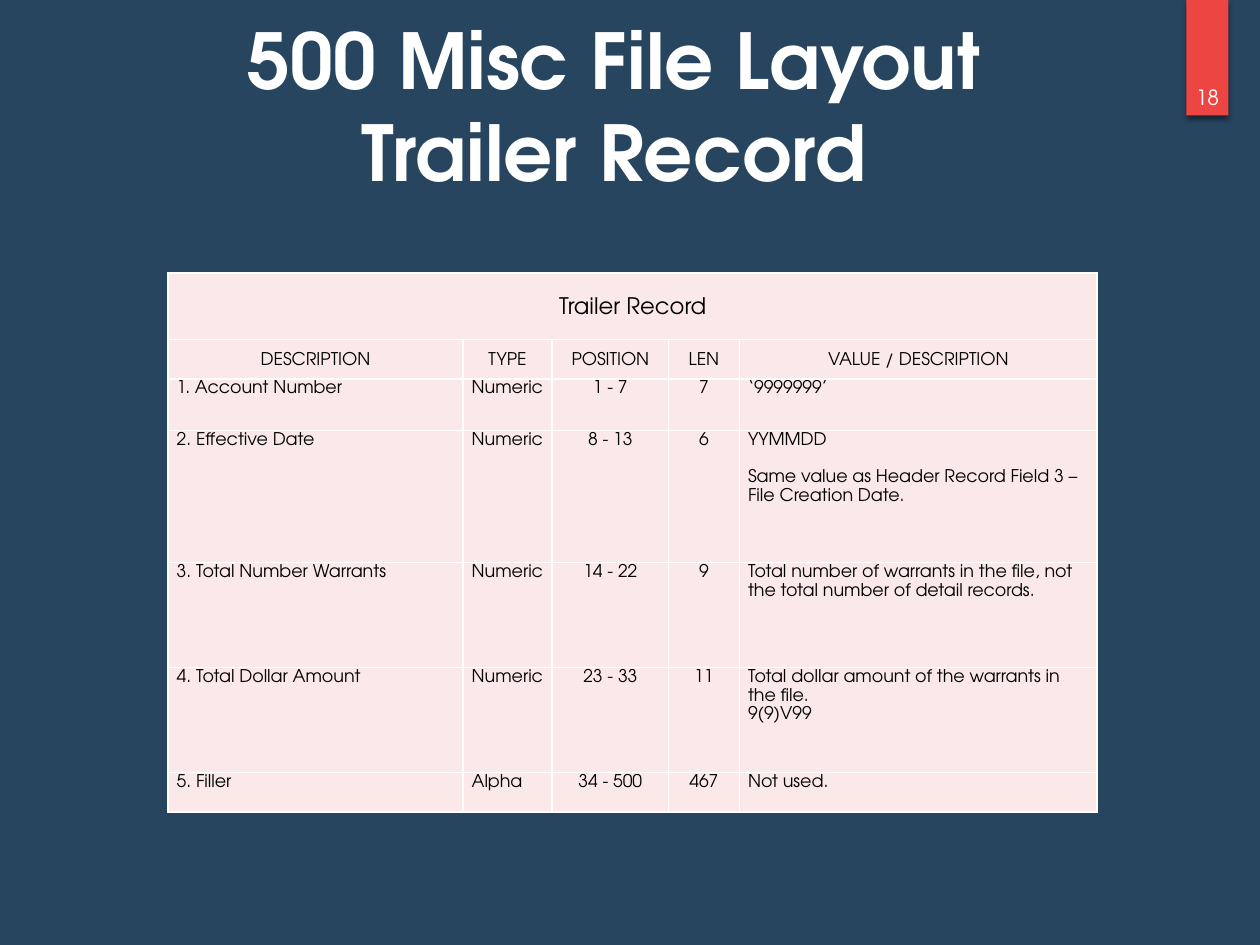
import dataclasses

import lxml.etree
import pptx
import pptx.dml.color
import pptx.enum.shapes
import pptx.enum.text
import pptx.oxml
import pptx.oxml.ns
import pptx.util

Pt = pptx.util.Pt
Align = pptx.enum.text.PP_ALIGN
Anchor = pptx.enum.text.MSO_ANCHOR
qn = pptx.oxml.ns.qn


@dataclasses.dataclass(frozen=True)
class Theme:
    font: str = "TeX Gyre Adventor"
    background: str = "27455F"
    accent: str = "ED4541"
    cell: str = "FBE9E9"
    light: str = "FFFFFF"
    dark: str = "000000"
    title: float = 44
    caption: float = 13
    number: float = 12
    body: float = 10
    spacing: float = 1.15


def rgb(code):
    return pptx.dml.color.RGBColor.from_string(code)


class SlideBuilder:
    def __init__(self, slide, theme):
        self.slide = slide
        self.theme = theme
        slide.background.fill.solid()
        slide.background.fill.fore_color.rgb = rgb(theme.background)

    def set_text(self, frame, paragraphs, size, color, align, bold=False, spacing=None, gap=0):
        frame.word_wrap = True
        for index, words in enumerate(paragraphs):
            paragraph = frame.paragraphs[0] if index == 0 else frame.add_paragraph()
            paragraph.text = words
            paragraph.alignment = align
            paragraph.line_spacing = spacing
            paragraph.space_before = Pt(gap if index else 0)
            paragraph.font.name = self.theme.font
            paragraph.font.size = Pt(size)
            paragraph.font.bold = bold
            paragraph.font.color.rgb = rgb(color)

    def title(self, words, left, top, width, height):
        heading = self.slide.shapes.title
        heading.left, heading.top = Pt(left), Pt(top)
        heading.width, heading.height = Pt(width), Pt(height)
        frame = heading.text_frame
        frame.auto_size = pptx.enum.text.MSO_AUTO_SIZE.NONE
        frame.vertical_anchor = Anchor.MIDDLE
        self.set_text(frame, [words], self.theme.title, self.theme.light, Align.CENTER, bold=True)

    def ribbon(self, left, top, width, height):
        ribbon = self.slide.shapes.add_shape(
            pptx.enum.shapes.MSO_SHAPE.RECTANGLE, Pt(left), Pt(top), Pt(width), Pt(height))
        ribbon.fill.solid()
        ribbon.fill.fore_color.rgb = rgb(self.theme.accent)
        ribbon.line.fill.background()
        ribbon.shadow.inherit = False
        effects = ribbon._element.spPr.find(qn("a:effectLst"))
        shadow = lxml.etree.SubElement(
            effects, qn("a:outerShdw"), blurRad=str(Pt(3)), dist=str(Pt(2)), dir="5400000")
        tint = lxml.etree.SubElement(shadow, qn("a:srgbClr"), val=self.theme.dark)
        lxml.etree.SubElement(tint, qn("a:alpha"), val="45000")

    def page_number(self, words, left, top, width, height):
        frame = self.slide.shapes.add_textbox(
            Pt(left), Pt(top), Pt(width), Pt(height)).text_frame
        frame.margin_left = frame.margin_right = 0
        frame.vertical_anchor = Anchor.BOTTOM
        self.set_text(frame, [words], self.theme.number, self.theme.light, Align.CENTER)

    def border(self, cell):
        properties = cell._tc.get_or_add_tcPr()
        for index, side in enumerate(("a:lnL", "a:lnR", "a:lnT", "a:lnB")):
            line = properties.makeelement(qn(side), {"w": str(Pt(1))})
            fill = lxml.etree.SubElement(line, qn("a:solidFill"))
            lxml.etree.SubElement(fill, qn("a:srgbClr"), val=self.theme.light)
            properties.insert(index, line)

    def cell(self, cell, paragraphs, size, align, anchor, gap=0):
        cell.fill.solid()
        cell.fill.fore_color.rgb = rgb(self.theme.cell)
        cell.margin_left = cell.margin_right = Pt(5)
        cell.margin_top = cell.margin_bottom = 0
        cell.vertical_anchor = anchor
        self.border(cell)
        self.set_text(cell.text_frame, paragraphs, size, self.theme.dark, align,
                      spacing=self.theme.spacing, gap=gap)

    def record_table(self, caption, headings, fields, left, top, widths, heights):
        table = self.slide.shapes.add_table(
            len(heights), len(widths), Pt(left), Pt(top),
            Pt(sum(widths)), Pt(sum(heights))).table
        for column, width in zip(table.columns, widths):
            column.width = Pt(width)
        for row, height in zip(table.rows, heights):
            row.height = Pt(height)
        table.cell(0, 0).merge(table.cell(0, len(widths) - 1))
        for column, heading in enumerate(headings):
            self.cell(table.cell(0, column), [] if column else [caption],
                      self.theme.caption, Align.CENTER, Anchor.MIDDLE)
            self.cell(table.cell(1, column), [heading],
                      self.theme.body, Align.CENTER, Anchor.MIDDLE)
        for row, (*entries, notes, gap) in enumerate(fields, start=2):
            for column, entry in enumerate(entries):
                align = Align.CENTER if column in (2, 3) else Align.LEFT
                self.cell(table.cell(row, column), [entry],
                          self.theme.body, align, Anchor.TOP)
            self.cell(table.cell(row, len(entries)), notes,
                      self.theme.body, Align.LEFT, Anchor.TOP, gap)


HEADINGS = ["DESCRIPTION", "TYPE", "POSITION", "LEN", "VALUE / DESCRIPTION"]
FIELDS = [
    ("1. Account Number", "Numeric", "1 - 7", "7", ["‘9999999’"], 0),
    ("2. Effective Date", "Numeric", "8 - 13", "6",
     ["YYMMDD", "Same value as Header Record Field 3 – File Creation Date."], 10.6),
    ("3. Total Number Warrants", "Numeric", "14 - 22", "9",
     ["Total number of warrants in the file, not the total number of detail records."], 0),
    ("4. Total Dollar Amount", "Numeric", "23 - 33", "11",
     ["Total dollar amount of the warrants in the file.", "9(9)V99"], 0),
    ("5. Filler", "Alpha", "34 - 500", "467", ["Not used."], 0),
]


def main():
    deck = pptx.Presentation()
    deck.slide_width, deck.slide_height = Pt(720), Pt(540)
    builder = SlideBuilder(deck.slides.add_slide(deck.slide_layouts[5]), Theme())
    builder.ribbon(678, 0, 24, 66)
    builder.title("500 Misc File Layout\vTrailer Record", 48, 12, 606, 96)
    builder.page_number("18", 678, 27, 24, 39.5)
    builder.record_table("Trailer Record", HEADINGS, FIELDS, 96, 156,
                         widths=[168.5, 51, 66.5, 40.5, 204.5],
                         heights=[38, 22.5, 29.5, 75.5, 60, 60, 22.5])
    deck.save("out.pptx")


if __name__ == "__main__":
    main()
